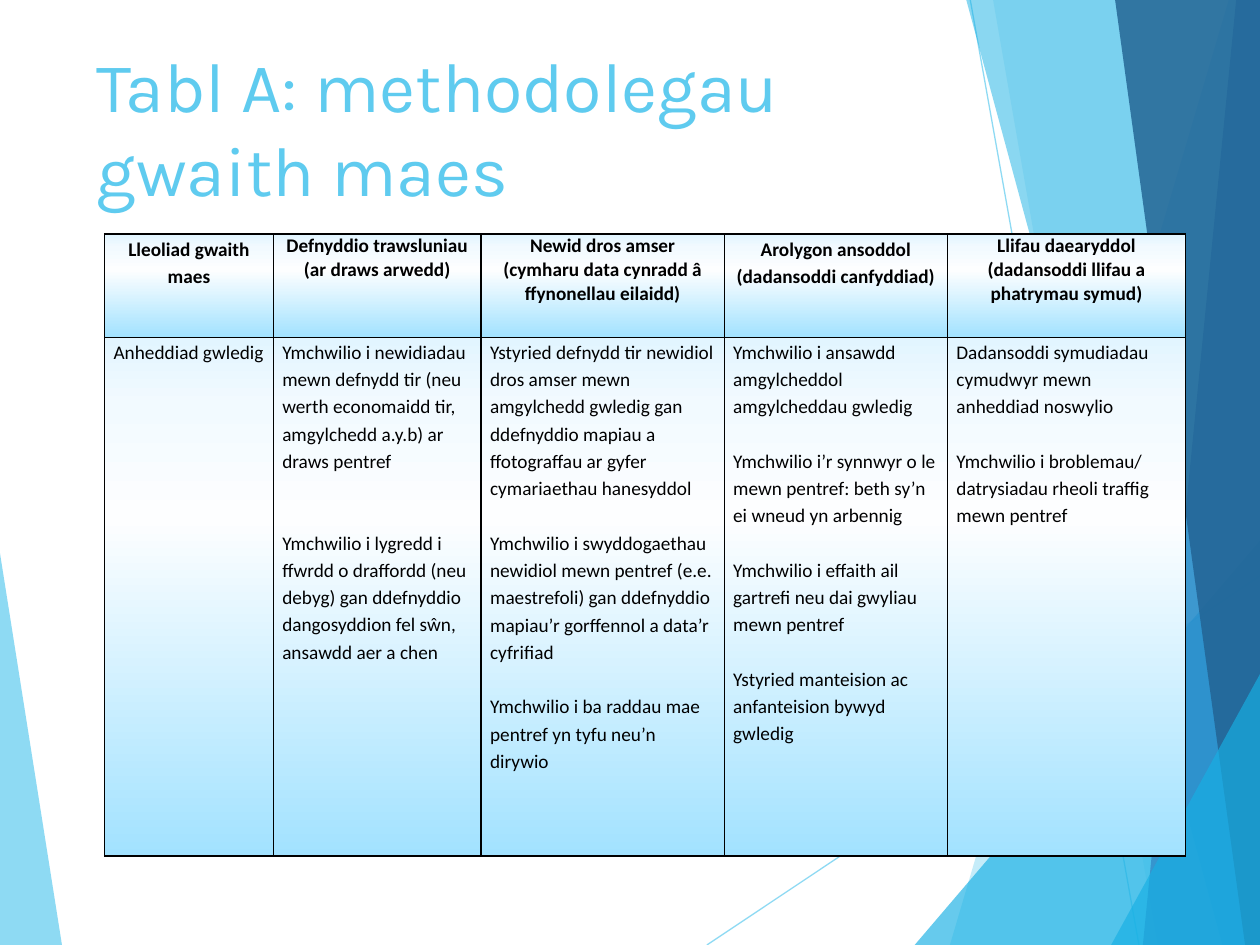
from lxml import etree
from pptx import Presentation
from pptx.dml.color import RGBColor
from pptx.enum.shapes import MSO_CONNECTOR
from pptx.enum.text import PP_ALIGN
from pptx.oxml.ns import qn
from pptx.util import Cm, Pt

STRAIGHT = MSO_CONNECTOR.STRAIGHT
LEFT, CENTER = PP_ALIGN.LEFT, PP_ALIGN.CENTER
WIDTH, HEIGHT = 25.4, 19.05
COLORS = {"sky": "5FCBEF", "cyan": "17B0E4", "blue": "2E83C3",
          "navy": "226292", "black": "000000"}
CELL_GRADIENT = [(0, "E2F5FF"), (13, "F2FAFF"), (35, "FDFEFF"), (100, "A2E2FF")]
BLANK_LINE = 15.5  # points taken by one empty line of body text

# Facets: top x, top y, bottom x, colour, opacity; each fills to the right edge
FACETS = [
    (24.77, 0, 19.15, "sky", 36),
    (20.02, 0, 23.34, "sky", 20),
    (WIDTH, 10.9, 18.44, "cyan", 66),
    (19.48, 0, 24.64, "cyan", 50),
    (24.92, 0, 23.04, "blue", 70),
    (22.48, 0, 25.1, "navy", 82),
    (WIDTH, 13.59, 22.4, "cyan", 66),
]
COLUMN_WIDTHS = [3.4, 4.19, 4.9, 4.5, 4.8]
ROW_HEIGHTS = [2.08, 10.46]

# Header cells: line spacing and paragraphs
HEADERS = [
    (1.15, ["Lleoliad gwaith maes"]),
    (1, ["Defnyddio trawsluniau", "(ar draws arwedd)"]),
    (1, ["Newid dros amser", "(cymharu data cynradd â ffynonellau eilaidd)"]),
    (1.15, ["Arolygon ansoddol (dadansoddi canfyddiad)"]),
    (1, ["Llifau daearyddol", "(dadansoddi llifau a phatrymau symud)"]),
]
# Body cells: blank lines between paragraphs, and paragraphs
METHODS = [
    (0, ["Anheddiad gwledig"]),
    (2, ["Ymchwilio i newidiadau mewn defnydd tir (neu werth economaidd tir, "
         "amgylchedd a.y.b) ar draws pentref",
         "Ymchwilio i lygredd i ffwrdd o draffordd (neu debyg) gan ddefnyddio "
         "dangosyddion fel sŵn, ansawdd aer a chen"]),
    (1, ["Ystyried defnydd tir newidiol dros amser mewn amgylchedd gwledig gan "
         "ddefnyddio mapiau a ffotograffau ar gyfer cymariaethau hanesyddol",
         "Ymchwilio i swyddogaethau newidiol mewn pentref (e.e. maestrefoli) gan "
         "ddefnyddio mapiau’r gorffennol a data’r cyfrifiad",
         "Ymchwilio i ba raddau mae pentref yn tyfu neu’n dirywio"]),
    (1, ["Ymchwilio i ansawdd amgylcheddol amgylcheddau gwledig",
         "Ymchwilio i’r synnwyr o le mewn pentref: beth sy’n ei wneud yn arbennig",
         "Ymchwilio i effaith ail gartrefi neu dai gwyliau mewn pentref",
         "Ystyried manteision ac anfanteision bywyd gwledig"]),
    (1, ["Dadansoddi symudiadau cymudwyr mewn anheddiad noswylio",
         "Ymchwilio i broblemau/ datrysiadau rheoli traffig mewn pentref"]),
]


def write_text(frame, paragraphs, font="Calibri", size=11, color="black",
               bold=False, align=LEFT, spacing=1, gap=0):
    frame.word_wrap = True
    for index, text in enumerate(paragraphs):
        paragraph = frame.add_paragraph() if index else frame.paragraphs[0]
        paragraph.alignment = align
        paragraph.line_spacing = spacing
        paragraph.space_before = Pt(gap if index else 0)
        run = paragraph.add_run()
        run.text = text
        run.font.name = font
        run.font.size = Pt(size)
        run.font.bold = bold
        run.font.color.rgb = RGBColor.from_string(COLORS[color])


def set_opacity(color_parent, percent):
    for color in color_parent.iter(qn("a:srgbClr")):
        etree.SubElement(color, qn("a:alpha"), val=str(percent * 1000))


def add_facet(slide, box, top_x, top_y, bottom_x, color, opacity, side=WIDTH):
    left, top, _, height = box
    points = [(Cm(left + x), Cm(top + y)) for x, y in
              [(top_x, top_y), (bottom_x, height), (side, height), (side, top_y)]]
    builder = slide.shapes.build_freeform(*points[0])
    builder.add_line_segments(points[1:], close=True)
    shape = builder.convert_to_shape()
    shape.shadow.inherit = False
    shape.line.fill.background()
    shape.fill.solid()
    shape.fill.fore_color.rgb = RGBColor.from_string(COLORS[color])
    set_opacity(shape._element.spPr, opacity)


def add_thin_line(slide, box, x1, y1, x2, y2):
    left, top, _, _ = box
    line = slide.shapes.add_connector(STRAIGHT, Cm(left + x1), Cm(top + y1),
                                      Cm(left + x2), Cm(top + y2))
    line.line.width = Pt(0.75)
    line.line.color.rgb = RGBColor.from_string(COLORS["sky"])
    set_opacity(line._element.spPr, 70)
    etree.SubElement(line._element.spPr, qn("a:effectLst"))


def add_backdrop(slide, box):
    height = box[3]
    add_facet(slide, box, 0, 11.15, 1.25, "sky", 70, side=0)
    add_thin_line(slide, box, 14.25, height, WIDTH, 11.61)
    add_thin_line(slide, box, 19.56, 0, 22.96, height)
    for facet in FACETS:
        add_facet(slide, box, *facet)


def add_title(slide, box, text):
    shape = slide.shapes.add_textbox(*map(Cm, box))
    write_text(shape.text_frame, [text], font="Karla", size=40, color="sky")


def style_cell(cell, margin):
    cell.margin_left = cell.margin_right = Cm(margin)
    cell.margin_top = cell.margin_bottom = 0
    properties = cell._tc.get_or_add_tcPr()
    # Borders come before the fill
    for side in ("lnL", "lnR", "lnT", "lnB"):
        border = etree.SubElement(properties, qn(f"a:{side}"), w=str(Pt(1)))
        fill = etree.SubElement(border, qn("a:solidFill"))
        etree.SubElement(fill, qn("a:srgbClr"), val=COLORS["black"])
    gradient = etree.SubElement(properties, qn("a:gradFill"))
    stops = etree.SubElement(gradient, qn("a:gsLst"))
    for position, color in CELL_GRADIENT:
        stop = etree.SubElement(stops, qn("a:gs"), pos=str(position * 1000))
        etree.SubElement(stop, qn("a:srgbClr"), val=color)
    etree.SubElement(gradient, qn("a:lin"), ang=str(90 * 60000), scaled="0")


def add_methods_table(slide, box):
    table = slide.shapes.add_table(2, len(COLUMN_WIDTHS), *map(Cm, box)).table
    table.first_row = table.horz_banding = False
    for column, width in zip(table.columns, COLUMN_WIDTHS):
        column.width = Cm(width)
    for row, height in zip(table.rows, ROW_HEIGHTS):
        row.height = Cm(height)
    for index, (spacing, paragraphs) in enumerate(HEADERS):
        cell = table.cell(0, index)
        style_cell(cell, 0.15)
        write_text(cell.text_frame, paragraphs, bold=True, align=CENTER,
                   spacing=spacing)
    for index, (blanks, paragraphs) in enumerate(METHODS):
        cell = table.cell(1, index)
        style_cell(cell, 0.18)
        write_text(cell.text_frame, paragraphs, spacing=1.15,
                   gap=blanks * BLANK_LINE)


def main():
    presentation = Presentation()
    presentation.slide_width, presentation.slide_height = Cm(WIDTH), Cm(HEIGHT)
    slide = presentation.slides.add_slide(presentation.slide_layouts[6])
    add_backdrop(slide, (0, 0, WIDTH, HEIGHT))
    add_title(slide, (1.7, 0.74, 17.63, 3.66), "Tabl A: methodolegau gwaith maes")
    add_methods_table(slide, (2.11, 4.72, sum(COLUMN_WIDTHS), sum(ROW_HEIGHTS)))
    presentation.save("out.pptx")


if __name__ == "__main__":
    main()
